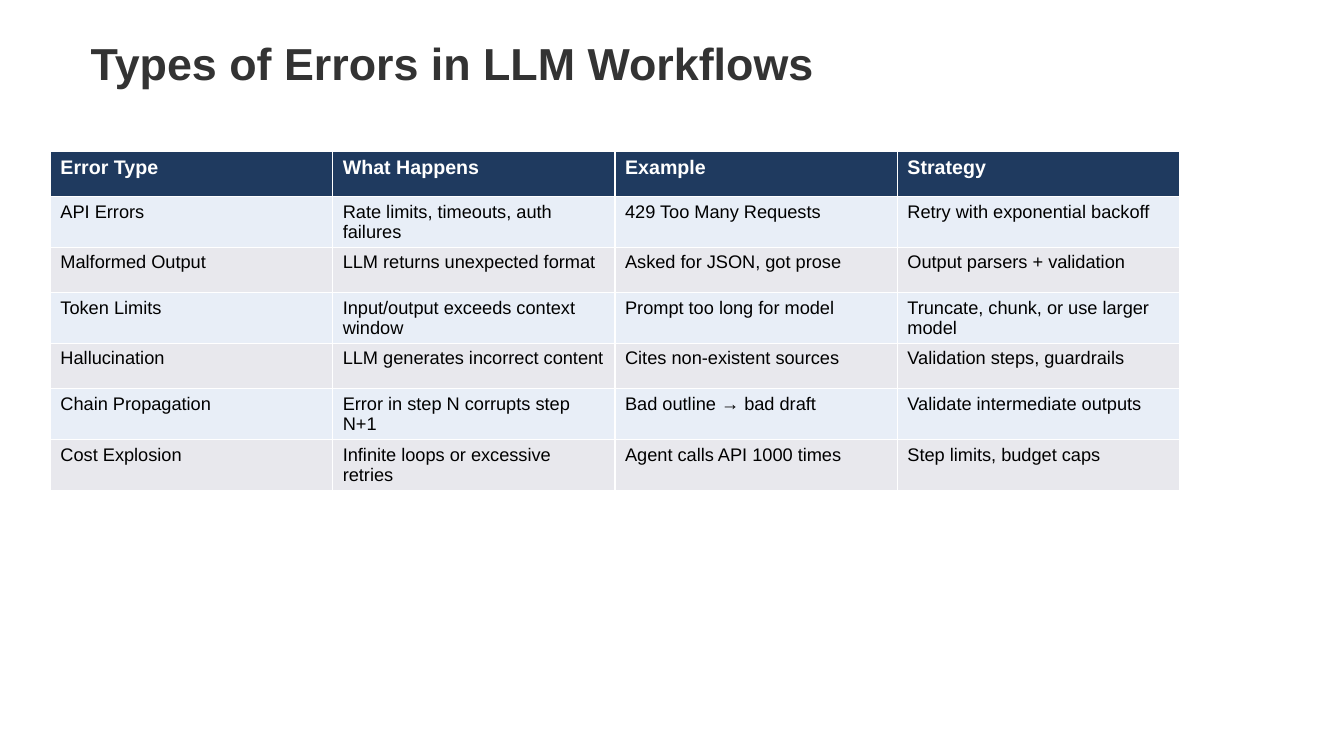
import pptx
import pptx.dml.color
import pptx.enum.text
import pptx.util

PX = 9144  # EMU per px, at 100 px to the inch
COLORS = {
    "title": "333333",
    "navy": "1F3A5F",
    "blue": "E8EEF7",
    "gray": "E8E8ED",
    "white": "FFFFFF",
    "black": "000000",
}
ROWS = [
    ("Error Type", "What Happens", "Example", "Strategy"),
    ("API Errors", "Rate limits, timeouts, auth failures",
     "429 Too Many Requests", "Retry with exponential backoff"),
    ("Malformed Output", "LLM returns unexpected format",
     "Asked for JSON, got prose", "Output parsers + validation"),
    ("Token Limits", "Input/output exceeds context window",
     "Prompt too long for model", "Truncate, chunk, or use larger model"),
    ("Hallucination", "LLM generates incorrect content",
     "Cites non-existent sources", "Validation steps, guardrails"),
    ("Chain Propagation", "Error in step N corrupts step N+1",
     "Bad outline → bad draft", "Validate intermediate outputs"),
    ("Cost Explosion", "Infinite loops or excessive retries",
     "Agent calls API 1000 times", "Step limits, budget caps"),
]


def rgb(name):
    return pptx.dml.color.RGBColor.from_string(COLORS[name])


def write(frame, text, size, color, bold=False):
    para = frame.paragraphs[0]
    para.alignment = pptx.enum.text.PP_ALIGN.LEFT
    run = para.add_run()
    run.text = text
    run.font.name = "Arial"
    run.font.size = pptx.util.Pt(size)
    run.font.bold = bold
    run.font.color.rgb = rgb(color)


deck = pptx.Presentation()
deck.slide_width, deck.slide_height = 1333 * PX, 750 * PX
slide = deck.slides.add_slide(deck.slide_layouts[5])

title = slide.shapes.title
title.left, title.top, title.width, title.height = 80 * PX, 30 * PX, 1050 * PX, 90 * PX
frame = title.text_frame
frame.word_wrap = True
frame.auto_size = pptx.enum.text.MSO_AUTO_SIZE.NONE
frame.vertical_anchor = pptx.enum.text.MSO_ANCHOR.TOP
write(frame, "Types of Errors in LLM Workflows", size=32, color="title", bold=True)

table = slide.shapes.add_table(
    len(ROWS), len(ROWS[0]), 50 * PX, 150 * PX, 1120 * PX, 45 * len(ROWS) * PX
).table
for r, row in enumerate(ROWS):
    head = r == 0
    fill = "navy" if head else "blue" if r % 2 else "gray"
    for c, text in enumerate(row):
        cell = table.cell(r, c)
        cell.fill.solid()
        cell.fill.fore_color.rgb = rgb(fill)
        write(cell.text_frame, text, size=14 if head else 13,
              color="white" if head else "black", bold=head)

deck.save("out.pptx")
